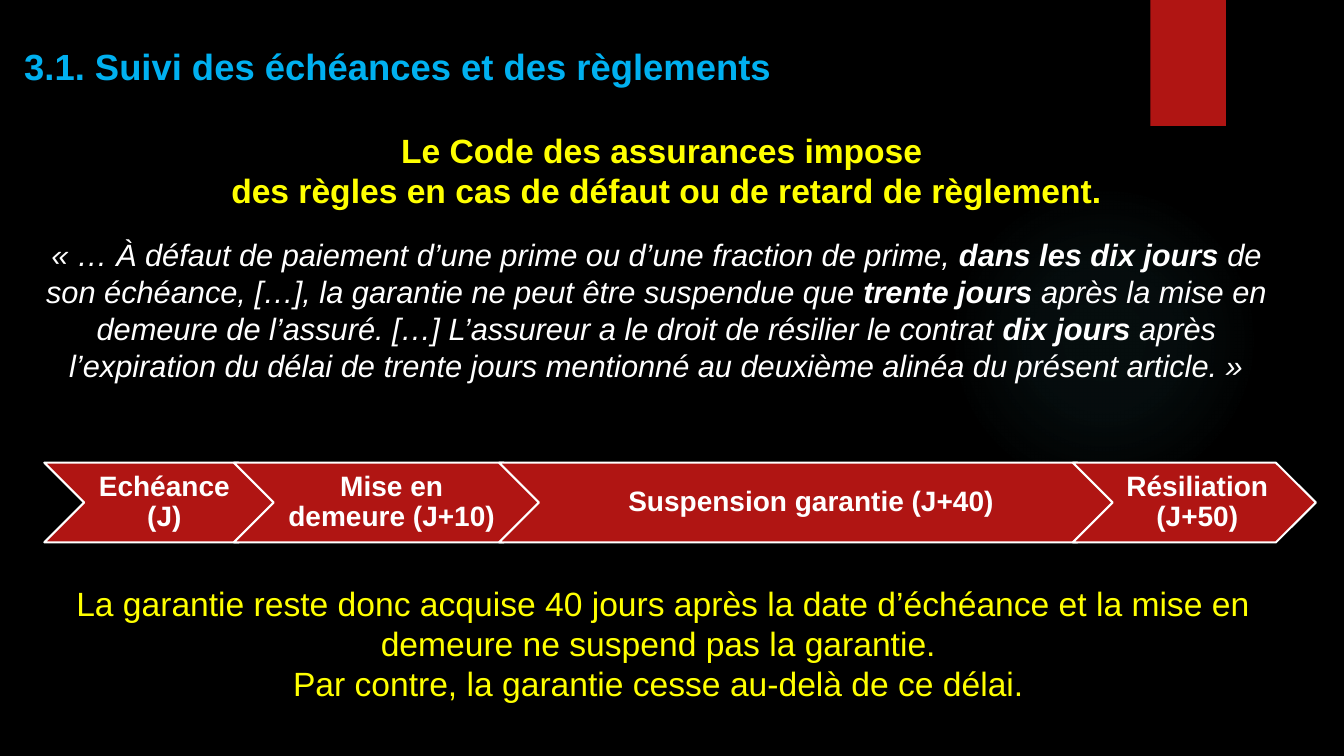
from lxml import etree
from pptx import Presentation
from pptx import util as u
from pptx.dml.color import RGBColor
from pptx.enum import shapes, text
from pptx.oxml import ns

FONT = "Arial"
RED, YELLOW, BLUE, WHITE, TEAL = "B01513", "FFFF00", "00B0F0", "FFFFFF", "50B9C1"
QUOTE = [
    ("«\u00a0… À défaut de paiement d’une prime ou d’une fraction de prime, ", False),
    ("dans les dix jours", True),
    (" de son échéance, […], la garantie ne peut être suspendue que ", False),
    ("trente jours", True),
    (" après la mise en demeure de l’assuré. […] L’assureur a le droit de résilier le contrat ", False),
    ("dix jours", True),
    (" après l’expiration du délai de trente jours mentionné au deuxième alinéa du présent article. »", False),
]
STEPS = [("Echéance (J)", 2.32), ("Mise en demeure (J+10)", 3.07),
         ("Suspension garantie (J+40)", 6.13), ("Résiliation (J+50)", 2.41)]


def color(value):
    """Return the colour of a hex string."""
    return RGBColor.from_string(value)


def inches(box):
    """Convert a box given in inches to lengths."""
    return [u.Inches(length) for length in box]


def format_paragraph(paragraph, size, hue, bold=None, italic=None, margin=0, before=0):
    """Centre a paragraph and set its font, left margin and space before."""
    if margin:
        paragraph._p.get_or_add_pPr().set("marL", str(u.Inches(margin)))
    paragraph.alignment = text.PP_ALIGN.CENTER
    paragraph.space_before = u.Pt(before)
    font = paragraph.font
    font.name, font.size, font.bold, font.italic = FONT, u.Pt(size), bold, italic
    font.color.rgb = color(hue)


def add_shape(slide, kind, box, hue):
    """Add a flat filled shape without outline."""
    shape = slide.shapes.add_shape(kind, *inches(box))
    shape.shadow.inherit = False
    shape.fill.solid()
    shape.fill.fore_color.rgb = color(hue)
    shape.line.fill.background()
    return shape


def add_text_frame(slide, box):
    """Add a wrapping text box and return its frame."""
    frame = slide.shapes.add_textbox(*inches(box)).text_frame
    frame.word_wrap = True
    return frame


def add_decoration(slide):
    """Add the faint round glow and the red ribbon."""
    glow = add_shape(slide, shapes.MSO_SHAPE.OVAL, (9.41, 1.83, 3.08, 3.08), TEAL)
    stops = "".join(
        f'<a:gs pos="{place}000"><a:srgbClr val="{TEAL}"><a:alpha val="{alpha}000"/></a:srgbClr></a:gs>'
        for place, alpha in ((0, 7), (36, 6), (69, 0)))
    gradient = etree.fromstring(
        f'<a:gradFill {ns.nsdecls("a")}><a:gsLst>{stops}</a:gsLst><a:path path="circle">'
        '<a:fillToRect l="50000" t="50000" r="50000" b="50000"/></a:path></a:gradFill>')
    properties = glow._element.spPr
    properties.replace(properties.find(ns.qn("a:solidFill")), gradient)
    add_shape(slide, shapes.MSO_SHAPE.RECTANGLE, (11.41, 0, 0.75, 1.25), RED)


def set_title(slide, box):
    """Place and format the slide title."""
    title = slide.shapes.title
    title.left, title.top, title.width, title.height = inches(box)
    frame = title.text_frame
    frame.text = "3.1. Suivi des échéances et des règlements"
    frame.vertical_anchor = text.MSO_ANCHOR.TOP
    format_paragraph(frame.paragraphs[0], 26, BLUE, bold=True)
    frame.paragraphs[0].alignment = text.PP_ALIGN.LEFT


def add_rule(slide, box):
    """Add the statement of the rule and the quoted article."""
    frame = add_text_frame(slide, box)
    frame.text = ("Le Code des assurances impose \n"
                  "des règles en cas de défaut ou de retard de règlement.")
    for paragraph in frame.paragraphs:
        format_paragraph(paragraph, 24, YELLOW, bold=True, margin=0.4)
    quote = frame.add_paragraph()
    for words, bold in QUOTE:
        run = quote.add_run()
        run.text = words
        run.font.bold = bold
    format_paragraph(quote, 22, WHITE, italic=True, margin=0.2, before=18)


def add_timeline(slide, left, top, height, overlap):
    """Add the chain of overlapping chevrons."""
    for label, width in STEPS:
        step = add_shape(slide, shapes.MSO_SHAPE.CHEVRON, (left, top, width, height), RED)
        step.line.color.rgb = color(WHITE)
        step.line.width = u.Pt(1.5)
        frame = step.text_frame
        frame.text = label
        frame.word_wrap = True
        frame.vertical_anchor = text.MSO_ANCHOR.MIDDLE
        frame.margin_left = u.Inches(0.09)
        frame.margin_right = frame.margin_top = frame.margin_bottom = u.Inches(0.03)
        format_paragraph(frame.paragraphs[0], 20, WHITE, bold=True)
        frame.paragraphs[0].line_spacing = 0.9
        left += width - overlap


def add_conclusion(slide, box):
    """Add the closing remark."""
    frame = add_text_frame(slide, box)
    frame.text = ("La garantie reste donc acquise 40 jours après la date d’échéance et la mise en "
                  "demeure ne suspend pas la garantie. \n"
                  "Par contre, la garantie cesse au-delà de ce délai. ")
    for paragraph in frame.paragraphs:
        format_paragraph(paragraph, 24, YELLOW)


def main():
    """Build the slide and save it."""
    presentation = Presentation()
    presentation.slide_width, presentation.slide_height = inches((13.33, 7.5))
    slide = presentation.slides.add_slide(presentation.slide_layouts[5])
    slide.background.fill.solid()
    slide.background.fill.fore_color.rgb = color("000000")
    add_decoration(slide)
    set_title(slide, (0.14, 0.39, 11, 0.6))
    add_rule(slide, (0.14, 1.24, 12.54, 2.65))
    add_timeline(slide, 0.44, 4.59, 0.79, 0.44)
    add_conclusion(slide, (0.2, 5.73, 12.75, 1.31))
    presentation.save("out.pptx")


if __name__ == "__main__":
    main()
